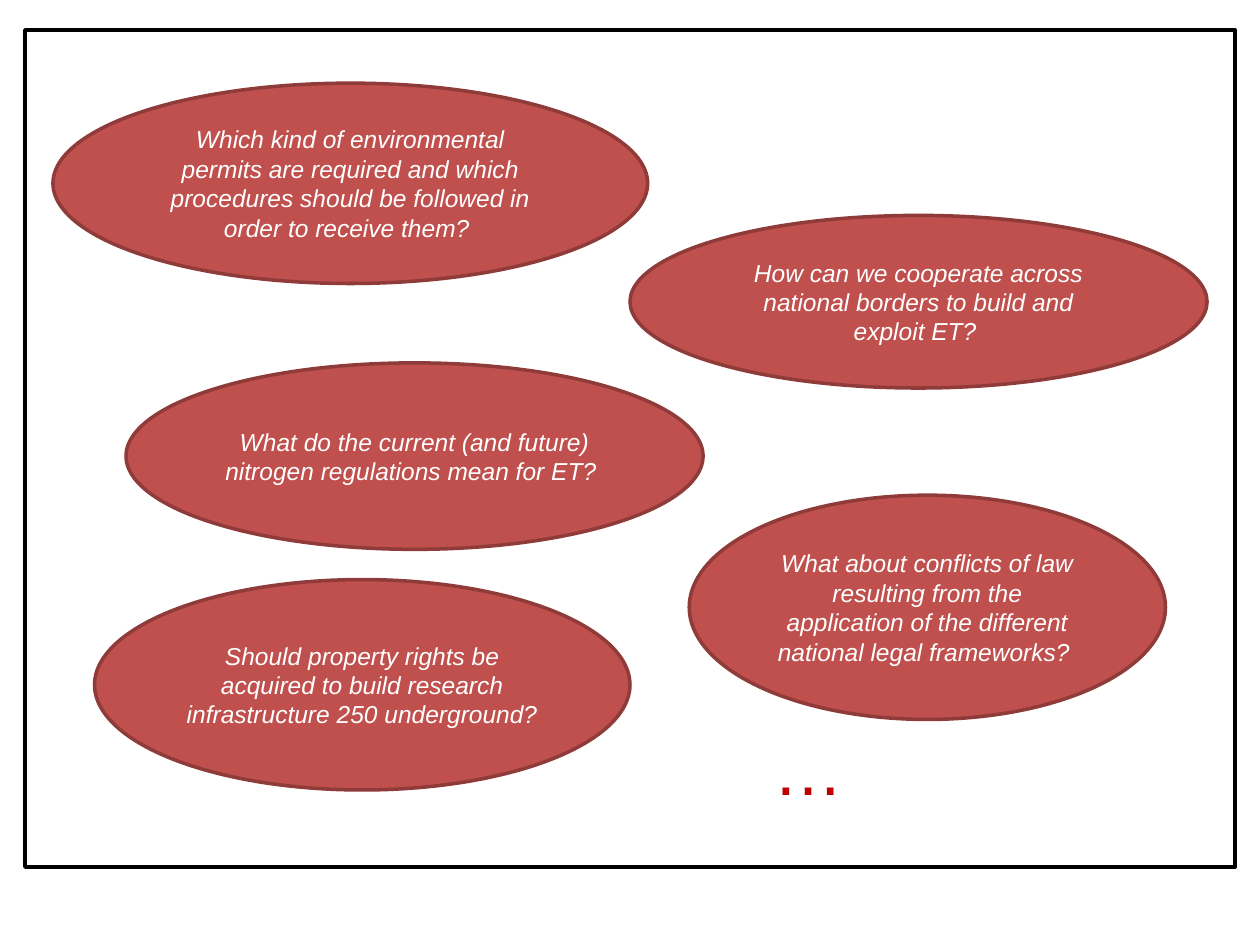
from pptx import Presentation
from pptx.dml.color import RGBColor
from pptx.enum import shapes, text
from pptx.util import Pt

# Content: question, then left, top, width, height in points
QUESTIONS = [
    ("Which kind of environmental permits are required and which procedures "
     "should be followed in order to receive them? ", (30.24, 47.52, 339.84, 114.48)),
    ("What do the current (and future) nitrogen regulations mean for ET? ",
     (72, 207.36, 329.76, 106.56)),
    ("How can we cooperate across national borders to build and exploit ET? ",
     (360, 123.12, 329.76, 98.64)),
    ("What about conflicts of law resulting from the application of the "
     "different national legal frameworks? ", (393.84, 282.96, 272.16, 128.16)),
    ("Should property rights be acquired to build research infrastructure "
     "250 underground? ", (54, 331.2, 306, 120.24)),
]
MORE = ("…", (434.88, 411.12, 156.24, 55.44))
FRAME = (14.4, 17.28, 691.2, 478.08)


def paint(color_format, hex_color):
    color_format.rgb = RGBColor.from_string(hex_color)


def add_outlined(slide, kind, box, line_color, line_width, fill_color=None):
    shape = slide.shapes.add_shape(kind, *map(Pt, box))
    shape.shadow.inherit = False
    if fill_color:
        shape.fill.solid()
        paint(shape.fill.fore_color, fill_color)
    else:
        shape.fill.background()
    paint(shape.line.color, line_color)
    shape.line.width = Pt(line_width)
    return shape


def write(frame, words, size, color, italic=None, align=None):
    frame.word_wrap = True
    paragraph = frame.paragraphs[0]
    paragraph.text = words
    paragraph.alignment = align
    font = paragraph.font
    font.name, font.size, font.italic = "Arial", Pt(size), italic
    paint(font.color, color)


def main():
    prs = Presentation()
    prs.slide_width, prs.slide_height = Pt(720), Pt(540)
    slide = prs.slides.add_slide(prs.slide_layouts[6])

    # Border around the slide area
    add_outlined(slide, shapes.MSO_SHAPE.RECTANGLE, FRAME, "000000", 2.5)

    # Question bubbles
    for question, box in QUESTIONS:
        bubble = add_outlined(slide, shapes.MSO_SHAPE.OVAL, box, "8E3B39", 2, "C0504D")
        bubble.text_frame.vertical_anchor = text.MSO_ANCHOR.MIDDLE
        write(bubble.text_frame, question, 14, "FFFFFF", True, text.PP_ALIGN.CENTER)

    # Sign that there are more questions
    dots, box = MORE
    more = slide.shapes.add_textbox(*map(Pt, box))
    write(more.text_frame, dots, 40, "C00000")
    more.text_frame.auto_size = text.MSO_AUTO_SIZE.SHAPE_TO_FIT_TEXT

    prs.save("out.pptx")


if __name__ == "__main__":
    main()
